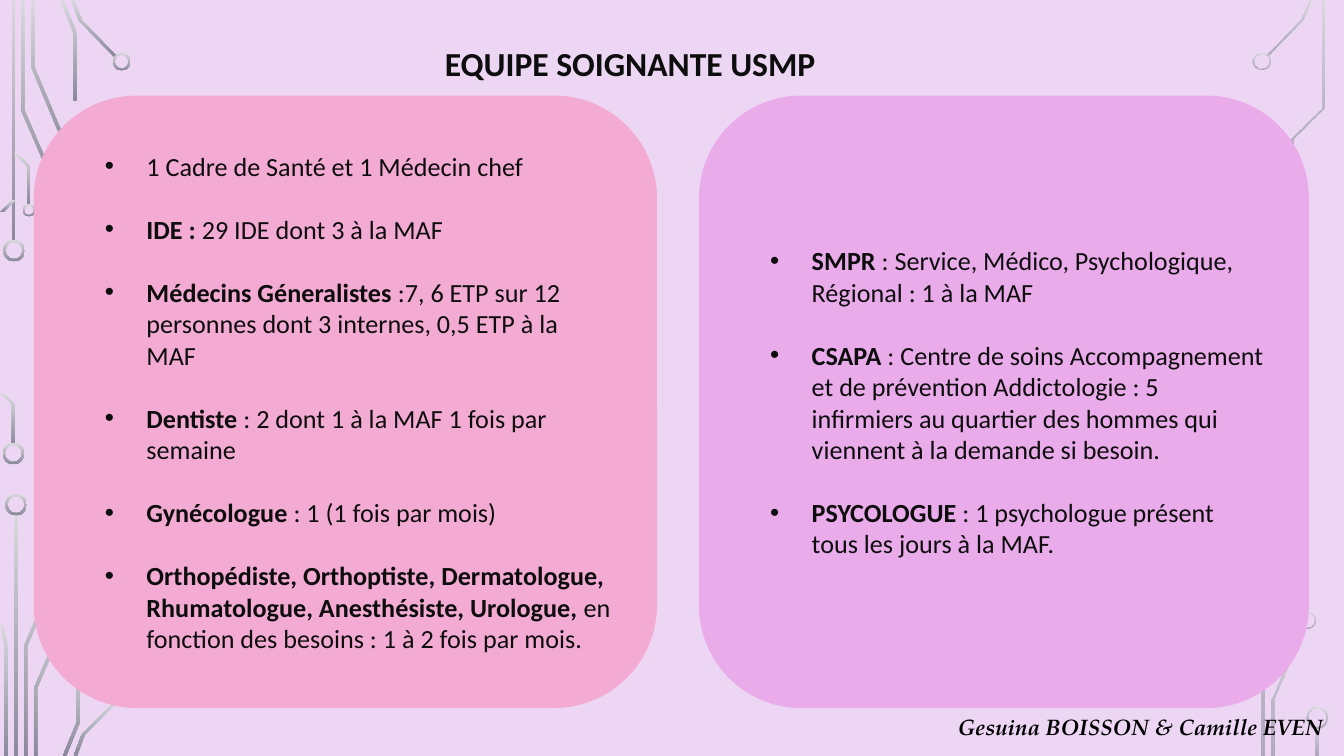
from lxml.etree import SubElement
from pptx import Presentation
from pptx.dml.color import RGBColor
from pptx.enum.shapes import MSO_SHAPE
from pptx.enum.text import MSO_ANCHOR, MSO_AUTO_SIZE, PP_ALIGN
from pptx.oxml.ns import qn
from pptx.util import Inches, Pt

COLORS = {
    "background": "ECD6F4", "pink": "F4ABD3", "violet": "EAABEB",
    "ink": "0D0D0D", "black": "000000", "light": "D8D9DC", "dark": "8A8A9C",
}
U = Inches(0.01)  # side of a grid cell
COLS = 1000
ROWS = COLS * 9 / 16
HALF = 1.2  # half the width of a circuit trace
LEFT, RIGHT = (100, 100), (80, 60)  # opacity at the top and bottom of a trace

# Centre lines of the circuit traces
TRACES = {
    LEFT: [
        [(10, 0), (10, 179)],
        [(17, 0), (17, 82), (46, 149)],
        [(24.5, 0), (24.5, 50), (53, 118)],
        [(46, 0), (56, 25), (56, 75)],
        [(54, 0), (60, 15.5), (86.5, 42.5)],
        [(10.5, 148.5), (1.5, 157.5)],
        [(1.5, 293), (10, 300.5), (10, 330.5)],
        [(11.5, 114), (21.5, 124), (21.5, 152)],
        [(12, 382), (12, ROWS)],
        [(48, 414), (19, 481), (19, ROWS)],
        [(1.5, 465), (4.5, 481), (4.5, ROWS)],
        [(55, 445), (26.5, 512), (26.5, ROWS)],
        [(58, 488), (58, 538), (48, ROWS)],
        [(88.5, 520), (62, 546.5), (56, ROWS)],
    ],
    RIGHT: [
        [(975, 0), (969, 14.5), (942.5, 41.5)],
        [(969.5, 467.5), (947, 520), (947, ROWS)],
        [(984.5, 0), (984.5, 80.5), (961.5, 103.5), (961.5, 127)],
        [(962.5, 414), (962.5, 437.5), (939.5, 460.5), (939.5, ROWS)],
        [(980, 541), (980, ROWS)],
    ],
}
# Centre and diameter of the rings that end the traces
RINGS = {
    LEFT: [(10.5, 186.5, 16), (10, 337.5, 16), (90.5, 46, 13), (21.5, 156.5, 9), (12, 375.5, 16)],
    RIGHT: [(938.5, 45.5, 13), (972.5, 461.5, 13), (980, 534, 16)],
}
# Left edge, width, colour and (bold, plain) items of each panel
PANELS = [
    (26, 462, "pink", [
        ("", "1 Cadre de Santé et 1 Médecin chef"),
        ("IDE : ", "29 IDE dont 3 à la MAF"),
        ("Médecins Géneralistes ", ":7, 6 ETP sur 12 personnes dont 3 internes, 0,5 ETP à la MAF"),
        ("Dentiste ", ": 2 dont 1 à la MAF 1 fois par semaine"),
        ("Gynécologue ", ": 1 (1 fois par mois)"),
        ("Orthopédiste, Orthoptiste, Dermatologue, Rhumatologue, Anesthésiste, Urologue, ",
         "en fonction des besoins : 1 à 2 fois par mois."),
    ]),
    (521, 452, "violet", [
        ("SMPR", " : Service, Médico, Psychologique, Régional : 1 à la MAF"),
        ("CSAPA", " : Centre de soins Accompagnement et de prévention Addictologie : "
                  "5 infirmiers au quartier des hommes qui viennent à la demande si besoin."),
        ("PSYCOLOGUE", " : 1 psychologue présent tous les jours à la MAF."),
    ]),
]
PANEL_TOP, PANEL_HEIGHT, INSET = 72, 454, 22


def rgb(name):
    return RGBColor.from_string(COLORS[name])


def write(p, text, size=14, bold=False, italic=False, font="Calibri", color="ink"):
    """Add a formatted run to paragraph p."""
    r = p.add_run()
    r.text = text
    r.font.size, r.font.bold, r.font.italic = Pt(size), bold, italic
    r.font.name = font
    r.font.color.rgb = rgb(color)


prs = Presentation()
prs.slide_width, prs.slide_height = COLS * U, int(ROWS * U)
slide = prs.slides.add_slide(prs.slide_layouts[3])
shapes = slide.shapes
slide.background.fill.solid()
slide.background.fill.fore_color.rgb = rgb("background")

# Circuit decoration
for opacity in (LEFT, RIGHT):
    parts = []
    for line in TRACES[opacity]:
        outline = [(x - HALF, y) for x, y in line] + [(x + HALF, y) for x, y in reversed(line)]
        points = [(x * U, y * U) for x, y in outline]
        builder = shapes.build_freeform(*points[0])
        builder.add_line_segments(points[1:], close=True)
        parts.append(builder.convert_to_shape())
    for x, y, size in RINGS[opacity]:
        sp = shapes.add_shape(MSO_SHAPE.DONUT, int((x - size / 2) * U), int((y - size / 2) * U),
                              size * U, size * U)
        sp.adjustments[0] = 0.1
        parts.append(sp)
    for sp in parts:
        sp.shadow.inherit = False
        sp.line.fill.background()
        sp.fill.gradient()
        sp.fill.gradient_angle = 270
        for stop, name in zip(sp.fill.gradient_stops, ("light", "dark")):
            stop.color.rgb = rgb(name)
        if opacity == RIGHT:
            for clr, share in zip(sp._element.spPr.iter(qn("a:srgbClr")), opacity):
                SubElement(clr, qn("a:alpha"), val=str(share * 1000))

# Title
title = shapes.title
title.left, title.top, title.width, title.height = 303 * U, 26 * U, 332 * U, 46 * U
tf = title.text_frame
tf.auto_size = MSO_AUTO_SIZE.NONE
tf.vertical_anchor = MSO_ANCHOR.MIDDLE
p = tf.paragraphs[0]
p.alignment, p.line_spacing = PP_ALIGN.CENTER, 0.9
write(p, "EQUIPE SOIGNANTE USMP", size=18, bold=True)

# Authors
authors = shapes.add_textbox(703 * U, 526 * U, 297 * U, 30 * U)
authors._element.addprevious(title._element)  # the title lies in front of the traces
tf = authors.text_frame
tf.word_wrap = True
write(tf.paragraphs[0], "Gesuina BOISSON & Camille EVEN", size=12, bold=True, italic=True,
      font="TeX Gyre Pagella", color="black")

# Panels, each with its list on top
bodies = [sp for sp in slide.placeholders if sp.placeholder_format.idx in (1, 2)]
for (left, width, color, items), body in zip(PANELS, bodies):
    panel = shapes.add_shape(MSO_SHAPE.ROUNDED_RECTANGLE, left * U, PANEL_TOP * U,
                             width * U, PANEL_HEIGHT * U)
    panel.shadow.inherit = False
    panel.fill.solid()
    panel.fill.fore_color.rgb = panel.line.color.rgb = rgb(color)
    panel.line.width = Pt(1.25)

    body.left, body.top = (left + INSET) * U, (PANEL_TOP + INSET) * U
    body.width, body.height = (width - 2 * INSET) * U, (PANEL_HEIGHT - 2 * INSET) * U
    panel._element.addnext(body._element)
    tf = body.text_frame
    tf.auto_size = MSO_AUTO_SIZE.NONE
    tf.vertical_anchor = MSO_ANCHOR.MIDDLE
    for i, (label, detail) in enumerate(items):
        p = tf.add_paragraph() if i else tf.paragraphs[0]
        pPr = p._p.get_or_add_pPr()
        pPr.set("marL", str(51 * U))
        pPr.set("indent", str(-31 * U))
        SubElement(pPr, qn("a:buFont"), typeface="Arial")
        SubElement(pPr, qn("a:buChar"), char="•")
        p.space_before = Pt(17 if i else 0)
        if label:
            write(p, label, bold=True)
        write(p, detail)

prs.save("out.pptx")
